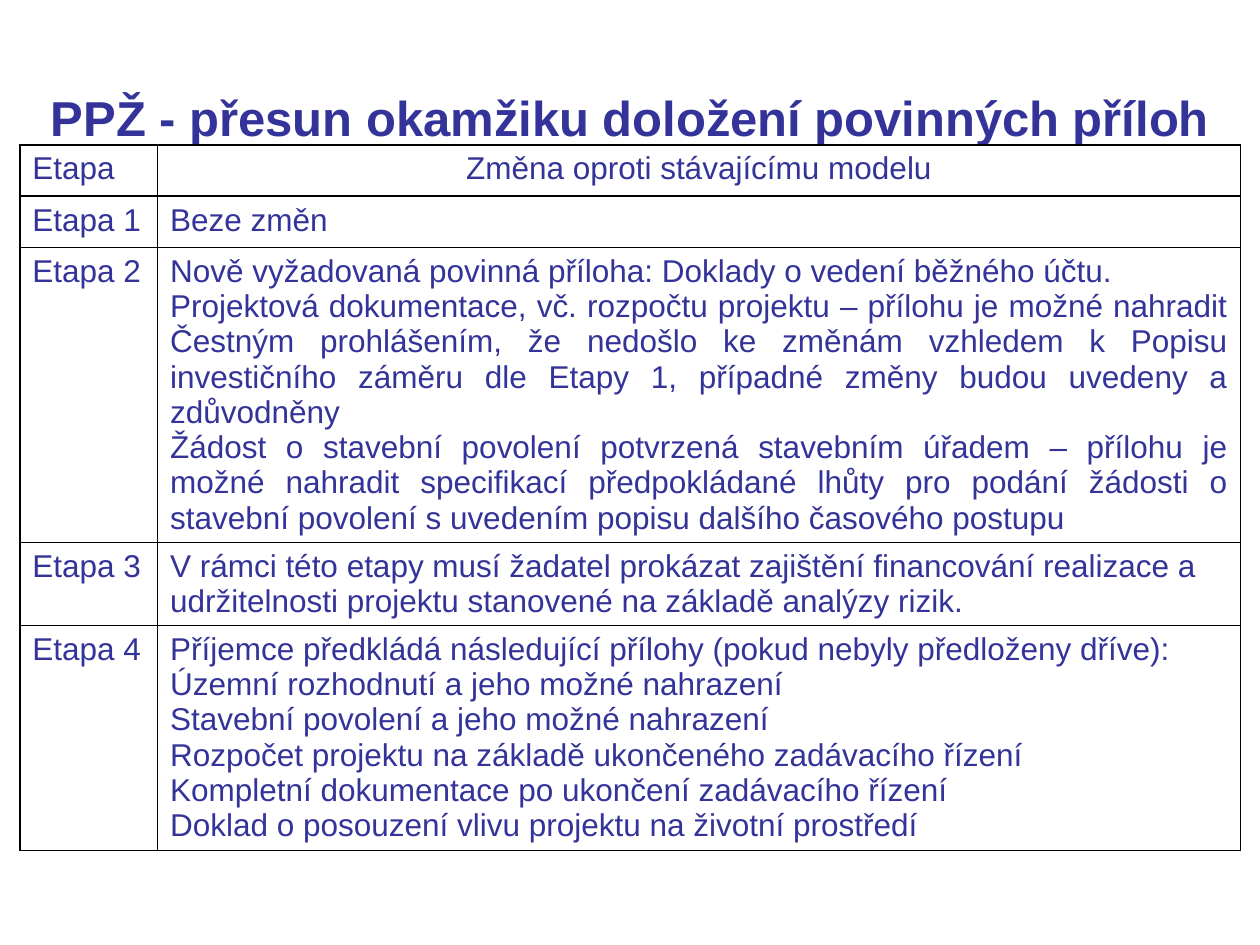
from dataclasses import dataclass

from lxml.etree import SubElement
from pptx import Presentation
from pptx.dml.color import RGBColor
from pptx.enum.text import MSO_ANCHOR, PP_ALIGN
from pptx.oxml.ns import qn
from pptx.util import Pt


@dataclass(frozen=True)
class Theme:
    """Colours, font and sizes of the slide."""
    ink: RGBColor = RGBColor(0x33, 0x33, 0x99)
    paper: RGBColor = RGBColor(0xFF, 0xFF, 0xFF)
    border: str = "000000"
    font: str = "Arial"
    title_size: int = 28
    body_size: int = 18
    border_width: int = 1


THEME = Theme()

TITLE = "PPŽ - přesun okamžiku doložení povinných příloh"

STAGES = [
    ("Etapa", PP_ALIGN.CENTER, 29.3, ["Změna oproti stávajícímu modelu"]),
    ("Etapa 1", PP_ALIGN.LEFT, 29.3, ["Beze změn"]),
    ("Etapa 2", PP_ALIGN.JUSTIFY, 168.5, [
        "Nově vyžadovaná povinná příloha: Doklady o vedení běžného účtu.",
        "Projektová dokumentace, vč. rozpočtu projektu – přílohu je možné "
        "nahradit Čestným prohlášením, že nedošlo ke změnám vzhledem "
        "k Popisu investičního záměru dle Etapy 1, případné změny budou "
        "uvedeny a zdůvodněny",
        "Žádost o stavební povolení potvrzená stavebním úřadem – přílohu je "
        "možné nahradit specifikací předpokládané lhůty pro podání žádosti o "
        "stavební povolení s uvedením popisu dalšího časového postupu",
    ]),
    ("Etapa 3", PP_ALIGN.LEFT, 47.5, [
        "V rámci této etapy musí žadatel prokázat zajištění financování "
        "realizace a udržitelnosti projektu stanovené na základě analýzy rizik.",
    ]),
    ("Etapa 4", PP_ALIGN.LEFT, 128.5, [
        "Příjemce předkládá následující přílohy (pokud nebyly předloženy dříve):",
        "Územní rozhodnutí a jeho možné nahrazení",
        "Stavební povolení a jeho možné nahrazení",
        "Rozpočet projektu na základě ukončeného zadávacího řízení",
        "Kompletní dokumentace po ukončení zadávacího řízení",
        "Doklad o posouzení vlivu projektu na životní prostředí",
    ]),
]


def style_paragraph(p, size, align, bold=False):
    """Apply the theme font and an alignment to a paragraph."""
    p.alignment = align
    p.font.name = THEME.font
    p.font.size = Pt(size)
    p.font.bold = bold
    p.font.color.rgb = THEME.ink


def add_borders(cell):
    """Draw a solid line on all four sides of a cell."""
    tc_pr = cell._tc.get_or_add_tcPr()
    for side in ("lnL", "lnR", "lnT", "lnB"):
        ln = SubElement(tc_pr, qn(f"a:{side}"), w=str(Pt(THEME.border_width)))
        fill = SubElement(ln, qn("a:solidFill"))
        SubElement(fill, qn("a:srgbClr"), val=THEME.border)


def fill_cell(cell, lines, align):
    """Write one paragraph per line into a bordered white cell."""
    add_borders(cell)
    cell.fill.solid()
    cell.fill.fore_color.rgb = THEME.paper
    tf = cell.text_frame
    tf.text = "\n".join(lines)
    for p in tf.paragraphs:
        style_paragraph(p, THEME.body_size, align)


def place_title(s, left, top, width, height):
    """Place the slide title in the given box."""
    sp = s.shapes.title
    sp.left, sp.top, sp.width, sp.height = map(Pt, (left, top, width, height))
    tf = sp.text_frame
    tf.text = TITLE
    tf.vertical_anchor = MSO_ANCHOR.MIDDLE
    style_paragraph(tf.paragraphs[0], THEME.title_size, PP_ALIGN.CENTER, True)


def place_stages(s, left, top, width, label_width):
    """Place the table of stages with its top left corner and width."""
    height = sum(stage[2] for stage in STAGES)
    frame = s.shapes.add_table(
        len(STAGES), 2, Pt(left), Pt(top), Pt(width), Pt(height))
    table = frame.table
    table.first_row = table.horz_banding = False
    table.columns[0].width = Pt(label_width)
    table.columns[1].width = Pt(width - label_width)
    for row, (label, align, row_height, lines) in zip(table.rows, STAGES):
        row.height = Pt(row_height)
        fill_cell(row.cells[0], [label], PP_ALIGN.LEFT)
        fill_cell(row.cells[1], lines, align)


def main():
    """Build and save the presentation."""
    prs = Presentation()
    prs.slide_width, prs.slide_height = Pt(720), Pt(540)
    s = prs.slides.add_slide(prs.slide_layouts[5])
    place_title(s, 0, 21.6, 720, 90)
    place_stages(s, 11.3, 82.8, 697.5, 78.7)
    prs.save("out.pptx")


if __name__ == "__main__":
    main()
